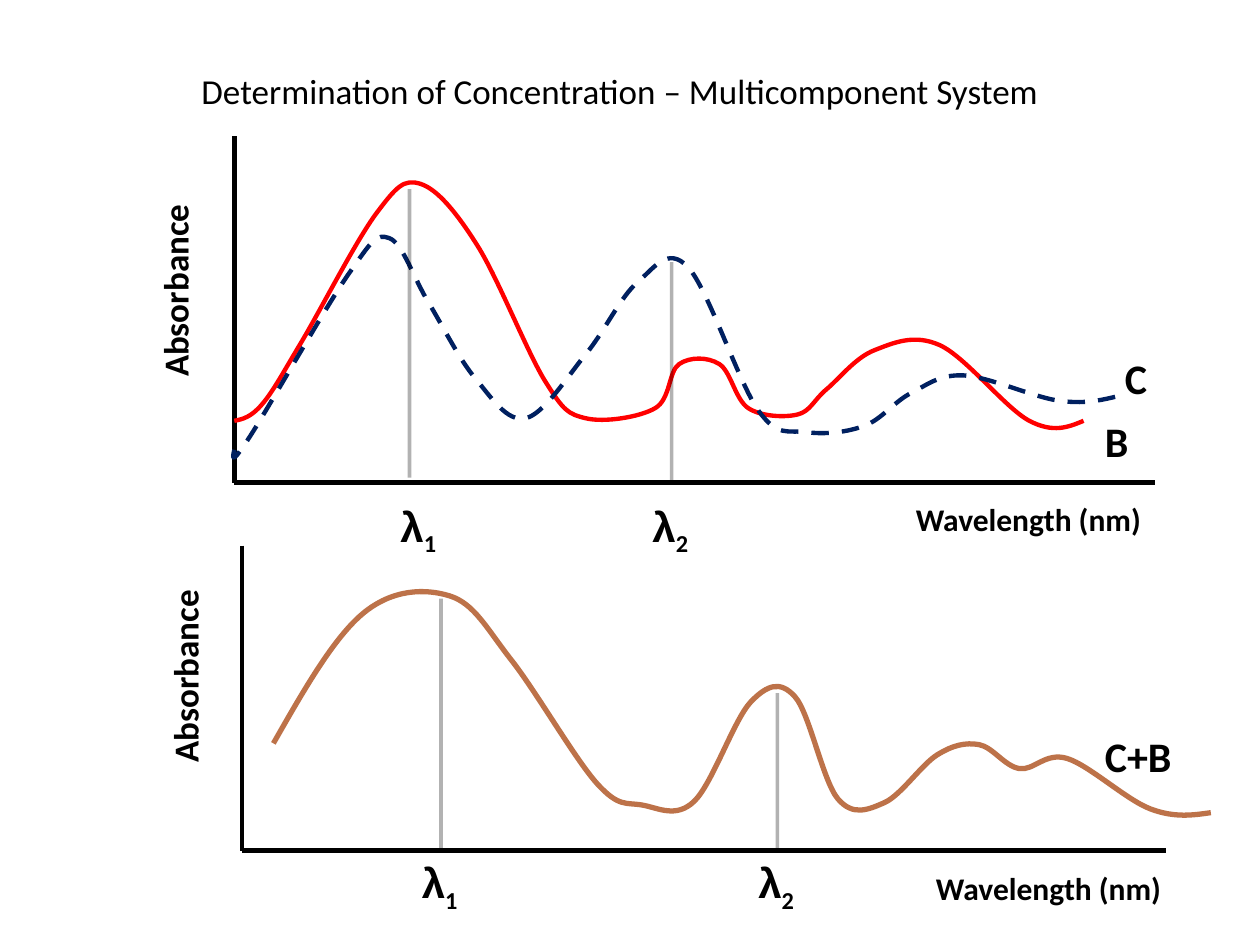
from lxml.etree import SubElement
from pptx import Presentation
from pptx.dml.color import RGBColor
from pptx.enum.dml import MSO_LINE as Dash
from pptx.enum.shapes import MSO_CONNECTOR as Link
from pptx.enum.text import MSO_ANCHOR as Anchor, MSO_AUTO_SIZE as Fit, PP_ALIGN as Align
from pptx.oxml.ns import qn
from pptx.util import Inches, Pt

TITLE = "Determination of Concentration – Multicomponent System"

# Knots of each spectrum, right to left, in inches
B = [(8.6, 3.34), (8.17, 3.34), (7.46, 2.74), (6.94, 2.78), (6.56, 3.09),
     (6.33, 3.29), (5.94, 3.24), (5.71, 2.89), (5.39, 2.89), (5.2, 3.24),
     (4.65, 3.32), (4.33, 3.03), (3.79, 1.95), (3.34, 1.46), (2.99, 1.69),
     (2.39, 2.72), (2.08, 3.21), (1.86, 3.34)]
C = [(8.85, 3.15), (8.4, 3.18), (7.65, 2.98), (7.23, 3.12), (6.86, 3.38),
     (6.4, 3.43), (6.02, 3.26), (5.46, 2.12), (5.06, 2.24), (4.65, 2.81),
     (4.17, 3.32), (3.77, 3), (3.4, 2.4), (3.09, 1.89), (2.77, 2.17),
     (1.98, 3.47), (1.86, 3.57)]
SUM = [(9.61, 6.45), (9.13, 6.42), (8.47, 6.02), (8.09, 6.1), (7.77, 5.91),
       (7.44, 5.99), (7.02, 6.37), (6.65, 6.34), (6.31, 5.53), (5.96, 5.57),
       (5.51, 6.36), (5.1, 6.39), (4.74, 6.22), (4.06, 5.24), (3.57, 4.73),
       (2.88, 4.87), (2.17, 5.9)]

# axes: left, top, right, bottom; curves: knots, colour, width, dashed
# peaks: x, top, bottom; marks: left edge of each λ label
PLOTS = [
    dict(axes=(1.86, 1.08, 9.17, 3.83),
         curves=[(B, "FF0000", 2.5, False), (C, "002060", 2.5, True)],
         peaks=[(3.25, 1.5, 3.79), (5.33, 2.08, 3.83)],
         marks=(3.08, 5.08), mark_y=3.92,
         names=[("C", 8.83, 2.75, 0.38), ("B", 8.67, 3.25, 0.39)],
         ylab=(1.17, 1.61), xlab=(7.17, 3.92)),
    dict(axes=(1.92, 4.33, 9.25, 6.75),
         curves=[(SUM, "BD7249", 3, False)],
         peaks=[(3.5, 4.75, 6.75), (6.17, 5.5, 6.75)],
         marks=(3.25, 5.92), mark_y=6.75,
         names=[("C+B", 8.67, 5.75, 0.74)],
         ylab=(1.25, 4.67), xlab=(7.33, 6.85)),
]

deck = Presentation()
deck.slide_width, deck.slide_height = Inches(10), Inches(7.5)
slide = deck.slides.add_slide(deck.slide_layouts[6])
shapes = slide.shapes


def color(code):
    return RGBColor.from_string(code)


def write(text, x, y, w, h, size=24, bold=True, font="Calibri", sub="",
          turn=False, wrap=False, align=Align.LEFT, anchor=Anchor.TOP):
    box = shapes.add_textbox(*map(Inches, (x, y, w, h)))
    frame = box.text_frame
    frame.word_wrap = wrap
    frame.auto_size = Fit.NONE if wrap else Fit.SHAPE_TO_FIT_TEXT
    frame.vertical_anchor = anchor
    if turn:
        frame._txBody.bodyPr.set("vert", "vert270")
    para = frame.paragraphs[0]
    para.alignment = align
    for part, face in ((text, font), (sub, "Calibri")):
        if part:
            run = para.add_run()
            run.text = part
            run.font.name, run.font.size, run.font.bold = face, Pt(size), bold
            run.font.color.rgb = color("000000")
    if sub:
        run.font._element.set("baseline", "-25000")


def rule(x1, y1, x2, y2, width=2.5, alpha=None):
    line = shapes.add_connector(Link.STRAIGHT, *map(Inches, (x1, y1, x2, y2)))
    line.line.width = Pt(width)
    line.line.color.rgb = color("000000")
    props = line._element.spPr
    if alpha:
        tone = props.find(".//" + qn("a:srgbClr"))
        SubElement(tone, qn("a:alpha")).set("val", str(alpha * 1000))
    SubElement(props, qn("a:effectLst"))


def handles(knots):
    """Two handles and an end for each span; slope is a sixth of the neighbours' gap."""
    def mid(a, b):
        return (a[0] + b[0]) / 2, (a[1] + b[1]) / 2

    def lean(i, sign):
        (x0, y0), (x, y), (x1, y1) = knots[i - 1:i + 2]
        return x + sign * (x1 - x0) / 6, y + sign * (y1 - y0) / 6

    last = len(knots) - 1
    points = []
    for i in range(last):
        near = lean(i, 1) if i else mid(knots[0], lean(1, -1))
        far = lean(i + 1, -1) if i + 1 < last else mid(lean(i, 1), knots[last])
        points += [near, far, knots[i + 1]]
    return points


def curve(knots, code, width, dashed):
    pen = shapes.build_freeform(*map(Inches, knots[0]), scale=1.0)
    pen.add_line_segments([(Inches(x), Inches(y)) for x, y in handles(knots)],
                          close=False)
    shape = pen.convert_to_shape()
    shape.shadow.inherit = False
    shape.fill.background()
    shape.line.color.rgb = color(code)
    shape.line.width = Pt(width)
    if dashed:
        shape.line.dash_style = Dash.DASH
    # Join every three straight steps into one cubic span
    path = shape._element.find(".//" + qn("a:path"))
    steps = path.findall(qn("a:lnTo"))
    for i in range(0, len(steps), 3):
        span = SubElement(path, qn("a:cubicBezTo"))
        for step in steps[i:i + 3]:
            span.append(step[0])
            path.remove(step)


write(TITLE, 0.67, 0.25, 8.5, 0.94, size=20, bold=False, wrap=True,
      align=Align.CENTER, anchor=Anchor.MIDDLE)

for plot in PLOTS:
    # Axes, spectra and peak lines
    left, top, right, base = plot["axes"]
    rule(left, top, left, base)
    rule(left, base, right, base)
    for item in plot["curves"]:
        curve(*item)
    for x, high, low in plot["peaks"]:
        rule(x, high, x, low, width=2, alpha=29)
    # Labels
    for name, x, y, w in plot["names"]:
        write(name, x, y, w, 0.5)
    for n, x in enumerate(plot["marks"], 1):
        write("λ", x, plot["mark_y"], 0.5, 0.5, font="Arial", sub=str(n))
    write("Absorbance", *plot["ylab"], 0.54, 1.48, size=20, turn=True)
    write("Wavelength (nm)", *plot["xlab"], 2, 0.4, size=18)

deck.save("out.pptx")
